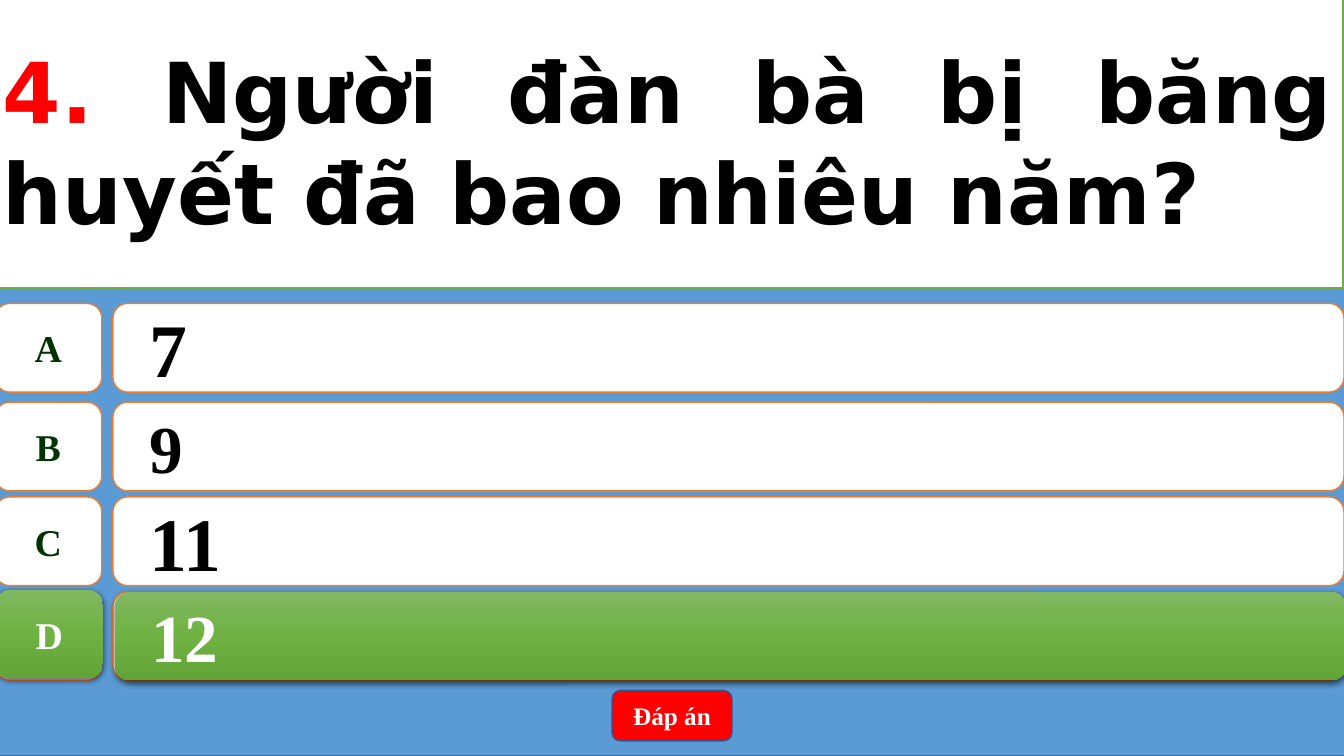
from copy import deepcopy
from dataclasses import dataclass

from lxml.etree import SubElement
from pptx import Presentation
from pptx.dml.color import RGBColor
from pptx.enum.shapes import MSO_SHAPE as Preset
from pptx.enum.text import MSO_ANCHOR as Anchor, PP_ALIGN as Align
from pptx.oxml.ns import qn
from pptx.util import Inches, Pt


@dataclass(frozen=True)
class Theme:
    """Colours, fonts and type sizes of the quiz."""
    white: str = "FFFFFF"
    black: str = "000000"
    red: str = "FF0000"
    backdrop: str = "5B9BD5"
    backdrop_line: str = "43739E"
    button_line: str = "325491"
    option_line: str = "ED7D31"
    question_line: str = "70AD47"
    letter: str = "003300"
    correct: tuple = ((0, "81B861"), (0.5, "6FB242"), (1, "62A336"))
    question_font: str = "DejaVu Sans"
    answer_font: str = "Times New Roman"
    question_size: int = 60
    large_answer: int = 54
    small_answer: int = 48
    letter_size: int = 27
    button_size: int = 18


THEME = Theme()


def add_box(shapes, preset, box, fill=None, line=None):
    """Add a shadowless shape in the box, given in inches."""
    shape = shapes.add_shape(preset, *(Inches(length) for length in box))
    shape.shadow.inherit = False
    if fill:
        shape.fill.solid()
        shape.fill.fore_color.rgb = RGBColor.from_string(fill)
    if line:
        shape.line.color.rgb = RGBColor.from_string(line)
        shape.line.width = Pt(1)
    else:
        shape.line.fill.background()
    return shape


def write(shape, runs, size, font, align=Align.CENTER, wrap=True):
    """Write bold (text, colour) runs into the shape and return the paragraph."""
    frame = shape.text_frame
    frame.word_wrap = wrap
    frame.vertical_anchor = Anchor.MIDDLE
    paragraph = frame.paragraphs[0]
    paragraph.alignment = align
    for text, colour in runs:
        run = paragraph.add_run()
        run.text = text
        run.font.name = font
        run.font.size = Pt(size)
        run.font.bold = True
        run.font.color.rgb = RGBColor.from_string(colour)
    return paragraph


def highlight(shape):
    """Give the shape the green gradient and soft shadow of the correct answer."""
    shape.fill.gradient()
    shape.fill.gradient_angle = 270
    properties = shape.element.spPr
    stops = properties.find(qn("a:gradFill")).find(qn("a:gsLst"))
    stops.insert(1, deepcopy(stops[0]))
    for stop, (position, colour) in zip(shape.fill.gradient_stops, THEME.correct):
        stop.position = position
        stop.color.rgb = RGBColor.from_string(colour)
    shadow = SubElement(properties.find(qn("a:effectLst")), qn("a:outerShdw"),
                        blurRad=str(Pt(4.5)), dist=str(Pt(1.5)), dir="5400000",
                        algn="ctr", rotWithShape="0")
    colour = SubElement(shadow, qn("a:srgbClr"), val=THEME.black)
    SubElement(colour, qn("a:alpha"), val="63000")


def add_option(slide, box, letter, answer, size, correct=False, answer_shift=(0, 0)):
    """Add one answer row: a letter tile and an answer bar."""
    left, top, width, height = box
    shift_x, shift_y = answer_shift
    tile_width, gap = 1.06, 0.11
    bar_left = left + tile_width + gap
    bar_width = width - tile_width - gap
    fill, line = (None, None) if correct else (THEME.white, THEME.option_line)
    shapes = slide.shapes.add_group_shape().shapes
    tile = add_box(shapes, Preset.FLOWCHART_ALTERNATE_PROCESS,
                   (left, top, tile_width, height), fill, line)
    bar = add_box(shapes, Preset.ROUNDED_RECTANGLE,
                  (bar_left + shift_x, top + shift_y, bar_width, height), fill, line)
    if correct:
        highlight(tile)
        highlight(bar)
    write(tile, [(letter, THEME.white if correct else THEME.letter)],
          THEME.letter_size, THEME.answer_font, wrap=False)
    paragraph = write(bar, [(answer, THEME.white if correct else THEME.black)],
                      size, THEME.answer_font, Align.LEFT)
    paragraph.level = 1
    indents = paragraph._p.get_or_add_pPr()
    indents.set("marL", str(Inches(0.5)))
    indents.set("indent", str(Inches(-0.28)))


def add_question(slide, box, number, question):
    """Add the question panel."""
    panel = add_box(slide.shapes, Preset.RECTANGLE, box, THEME.white, THEME.question_line)
    write(panel, [(number, THEME.red), (question, THEME.black)],
          THEME.question_size, THEME.question_font, Align.JUSTIFY)


def add_button(slide, box, label):
    """Add the red answer button."""
    button = add_box(slide.shapes, Preset.ROUNDED_RECTANGLE, box, THEME.red, THEME.button_line)
    write(button, [(label, THEME.white)], THEME.button_size, THEME.answer_font)


def build_quiz_slide(presentation):
    """Build the quiz slide with its question, options and button."""
    slide = presentation.slides.add_slide(presentation.slide_layouts[6])
    left, width, height = -0.05, 13.38, 0.88
    add_box(slide.shapes, Preset.RECTANGLE, (left, 0, 13.39, 7.5),
            THEME.backdrop, THEME.backdrop_line)
    options = (("A", "7", 3.01, THEME.large_answer), ("B", "9", 3.99, THEME.small_answer),
               ("C", "11", 4.93, THEME.large_answer), ("D", "12", 5.87, THEME.large_answer))
    for letter, answer, top, size in options:
        add_option(slide, (left, top, width, height), letter, answer, size)
    add_option(slide, (left + 0.01, 5.85, width, height), "D", "12",
               THEME.small_answer, correct=True, answer_shift=(0.01, 0.02))
    add_button(slide, (6.07, 6.85, 1.19, 0.5), "Đáp án")
    add_question(slide, (-0.07, -0.07, 13.39, 2.93), "4. ",
                 "Người đàn bà bị băng huyết đã bao nhiêu năm?")


def main():
    """Create and save the presentation."""
    presentation = Presentation()
    presentation.slide_width = Inches(13.33)
    presentation.slide_height = Inches(7.5)
    build_quiz_slide(presentation)
    presentation.save("out.pptx")


if __name__ == "__main__":
    main()
